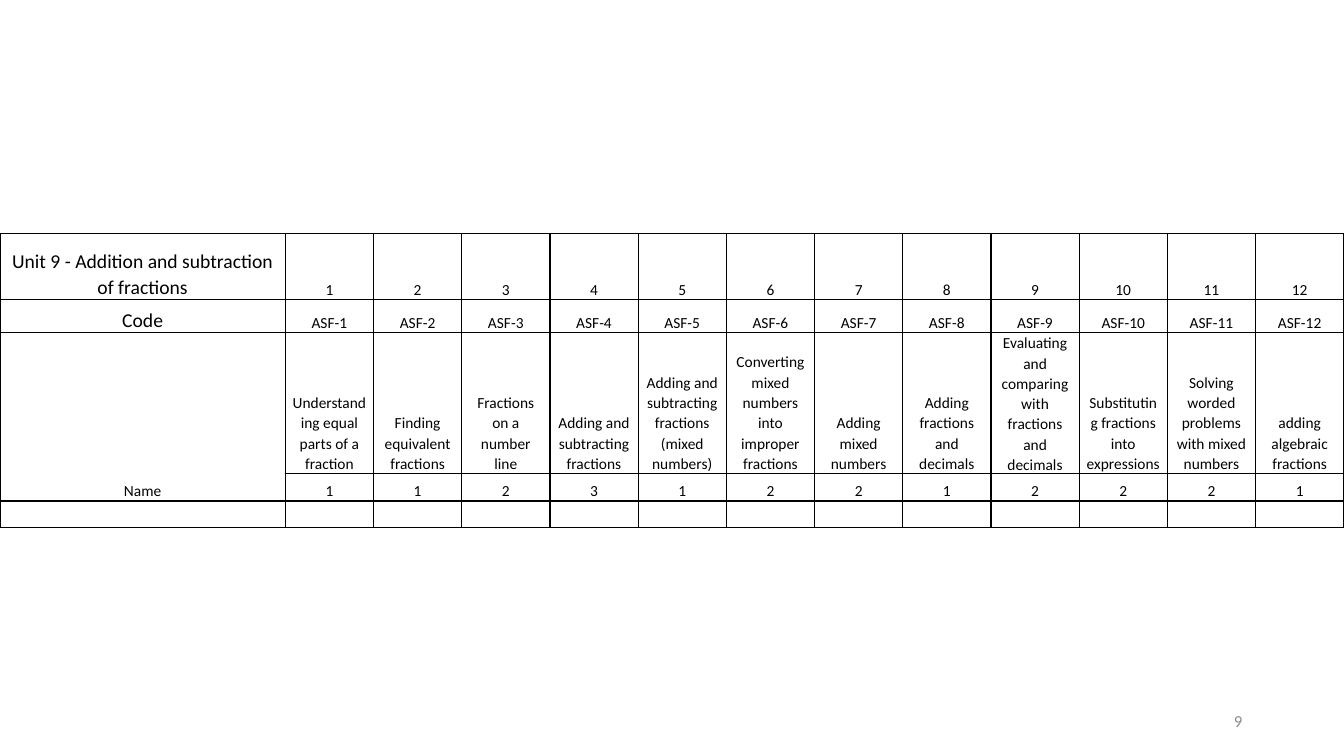
from dataclasses import dataclass

from lxml import etree
from pptx import Presentation
from pptx.dml.color import RGBColor
from pptx.enum.text import MSO_ANCHOR, PP_ALIGN
from pptx.oxml.ns import qn
from pptx.util import Inches, Pt

BOTTOM, MIDDLE = MSO_ANCHOR.BOTTOM, MSO_ANCHOR.MIDDLE
CENTER, RIGHT = PP_ALIGN.CENTER, PP_ALIGN.RIGHT


@dataclass(frozen=True)
class Theme:
    font: str = "Calibri"
    ink: str = "000000"
    gray: str = "8C8C8C"
    head: int = 14
    body: int = 11
    foot: int = 12
    rule: float = 1


THEME = Theme()
WIDTH, HEIGHT = 13.33, 7.5
LABEL = 2.83
ROWS = [0.65, 0.33, 1.4, 0.27, 0.26]
TOPICS = [
    ("Understanding equal parts of a fraction", 1),
    ("Finding equivalent fractions", 1),
    ("Fractions on a number line", 2),
    ("Adding and subtracting fractions", 3),
    ("Adding and subtracting fractions (mixed numbers)", 1),
    ("Converting mixed numbers into improper fractions", 2),
    ("Adding mixed numbers", 2),
    ("Adding fractions and decimals", 1),
    ("Evaluating and comparing with fractions and decimals", 2),
    ("Substituting fractions into expressions", 2),
    ("Solving worded problems with mixed numbers", 2),
    ("adding algebraic fractions", 1),
]


def add_text(para, text, size, color, align):
    para.alignment = align
    run = para.add_run()
    run.text = text
    run.font.name = THEME.font
    run.font.size = Pt(size)
    run.font.color.rgb = RGBColor.from_string(color)


def add_rules(cell):
    """Draw all four borders; they must come before the fill in the XML."""
    props = cell._tc.get_or_add_tcPr()
    for at, side in enumerate(("lnL", "lnR", "lnT", "lnB")):
        line = etree.Element(qn(f"a:{side}"), w=str(Pt(THEME.rule)))
        fill = etree.SubElement(line, qn("a:solidFill"))
        etree.SubElement(fill, qn("a:srgbClr"), val=THEME.ink)
        props.insert(at, line)


def fill_cell(cell, text, size):
    cell.margin_left = cell.margin_right = Inches(0.07)
    cell.margin_top = cell.margin_bottom = 0
    cell.vertical_anchor = BOTTOM
    cell.fill.background()
    add_rules(cell)
    para = cell.text_frame.paragraphs[0]
    para.line_spacing = 1.07
    if text:
        add_text(para, text, size, THEME.ink, CENTER)
    else:
        etree.SubElement(para._p, qn("a:endParaRPr"), sz=str(size * 100))


def add_grid(slide):
    count = len(TOPICS)
    nums = range(1, count + 1)
    names, marks = zip(*TOPICS)
    data = [
        ["Unit 9 - Addition and subtraction of fractions", *nums],
        ["Code", *(f"ASF-{num}" for num in nums)],
        ["Name", *names],
        ["", *marks],
        [""] * (count + 1),
    ]
    table = slide.shapes.add_table(
        len(ROWS), count + 1, 0, Inches(2.32), Inches(WIDTH), Inches(sum(ROWS))
    ).table
    table.first_row = table.horz_banding = False
    for col in table.columns:
        col.width = Inches((WIDTH - LABEL) / count)
    table.columns[0].width = Inches(LABEL)
    for row, high in zip(table.rows, ROWS):
        row.height = Inches(high)
    for r, line in enumerate(data):
        for c, text in enumerate(line):
            size = THEME.head if c == 0 and r < 2 else THEME.body
            fill_cell(table.cell(r, c), str(text), size)
    table.cell(2, 0).merge(table.cell(3, 0))


def add_number(slide):
    box = slide.shapes.add_textbox(Inches(9.42), Inches(6.95), Inches(3), Inches(0.4))
    frame = box.text_frame
    frame.word_wrap = True
    frame.vertical_anchor = MIDDLE
    add_text(frame.paragraphs[0], "9", THEME.foot, THEME.gray, RIGHT)


def main():
    deck = Presentation()
    deck.slide_width, deck.slide_height = Inches(WIDTH), Inches(HEIGHT)
    slide = deck.slides.add_slide(deck.slide_layouts[6])
    add_number(slide)
    add_grid(slide)
    deck.save("out.pptx")


if __name__ == "__main__":
    main()
